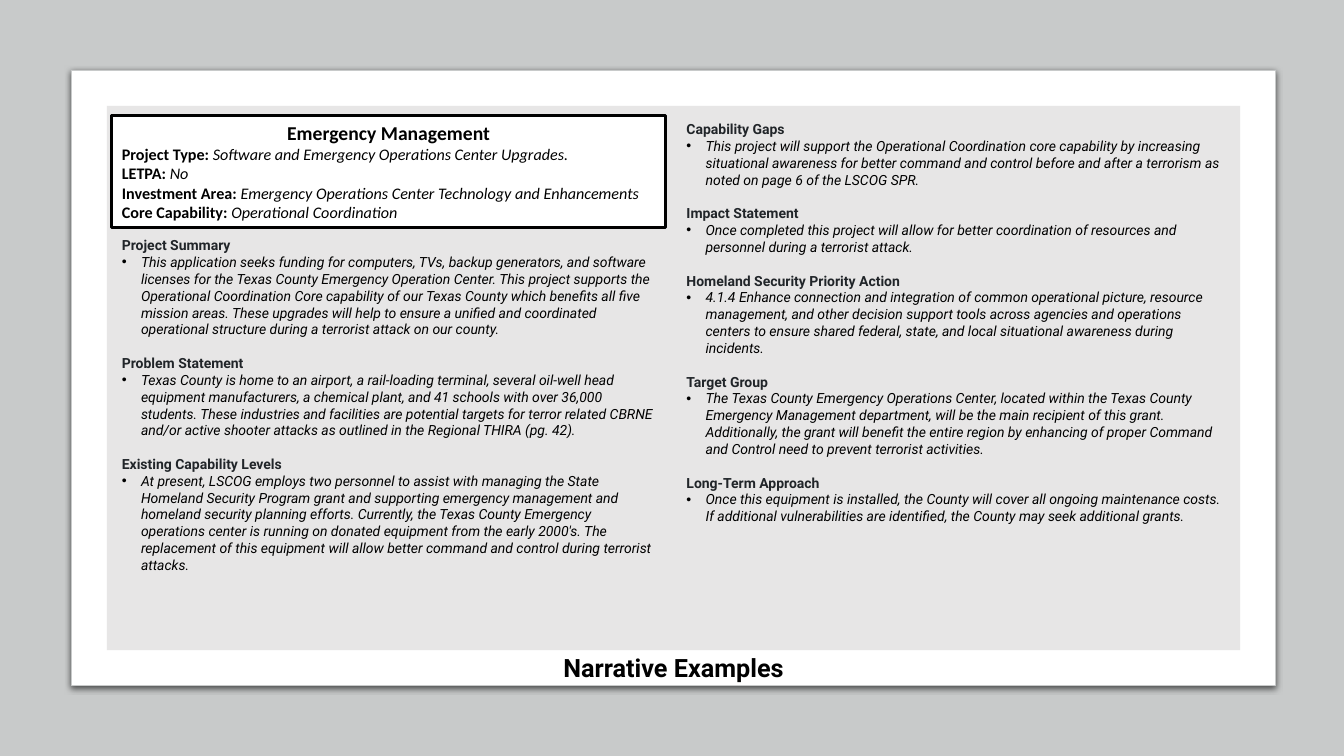
from lxml import etree
from pptx import Presentation
from pptx import util as u
from pptx.dml.color import RGBColor
from pptx.enum import shapes, text
from pptx.oxml import ns

HEADING, BODY, WHITE = "212529", "000000", "FFFFFF"
BACKDROP, PANEL = "C8CACA", "E7E6E6"

PROJECT_FACTS = [
    ("Project Type: ", "Software and Emergency Operations Center Upgrades."),
    ("LETPA: ", "No"),
    ("Investment Area: ", "Emergency Operations Center Technology and Enhancements"),
    ("Core Capability: ", "Operational Coordination"),
]

LEFT_SECTIONS = [
    ("Project Summary",
     "This application seeks funding for computers, TVs, backup generators, and software "
     "licenses for the Texas County Emergency Operation Center. This project supports the Operational "
     "Coordination Core capability of our Texas County which benefits all five mission areas. "
     "These upgrades will help to ensure a unified and coordinated operational structure during "
     "a terrorist attack on our county."),
    ("Problem Statement",
     "Texas County is home to an airport, a rail-loading terminal, several oil-well head equipment "
     "manufacturers, a chemical plant, and 41 schools with over 36,000 students. These industries "
     "and facilities are potential targets for terror related CBRNE and/or active shooter attacks "
     "as outlined in the Regional THIRA (pg. 42)."),
    ("Existing Capability Levels",
     "At present, LSCOG employs two personnel to assist with managing the State Homeland Security "
     "Program grant and supporting emergency management and homeland security planning efforts. "
     "Currently, the Texas County Emergency operations center is running on donated equipment from "
     "the early 2000's. The replacement of this equipment will allow better command and control "
     "during terrorist attacks."),
]

RIGHT_SECTIONS = [
    ("Capability Gaps",
     "This project will support the Operational Coordination core capability by increasing "
     "situational awareness for better command and control before and after a terrorism as noted "
     "on page 6 of the LSCOG SPR."),
    ("Impact Statement",
     "Once completed this project will allow for better coordination of resources and personnel "
     "during a terrorist attack."),
    ("Homeland Security Priority Action",
     "4.1.4 Enhance connection and integration of common operational picture, resource management, "
     "and other decision support tools across agencies and operations centers to ensure shared "
     "federal, state, and local situational awareness during incidents."),
    ("Target Group",
     "The Texas County Emergency Operations Center, located within the Texas County Emergency "
     "Management department, will be the main recipient of this grant. Additionally, the grant "
     "will benefit the entire region by enhancing of proper Command and Control need to prevent "
     "terrorist activities."),
    ("Long-Term Approach",
     "Once this equipment is installed, the County will cover all ongoing maintenance costs. If "
     "additional vulnerabilities are identified, the County may seek additional grants."),
]


def color(value):
    return RGBColor.from_string(value)


class NarrativeSlide:
    """Places styled elements by percentages of the slide's width and height."""

    def __init__(self, deck):
        self.deck = deck
        self.slide = deck.slides.add_slide(deck.slide_layouts[6])

    def area(self, left, top, width, height):
        across, down = self.deck.slide_width / 100, self.deck.slide_height / 100
        return [round(v) for v in (left * across, top * down, width * across, height * down)]

    def block(self, area, fill, line=None, weight=0.75, kind=shapes.MSO_SHAPE.RECTANGLE):
        block = self.slide.shapes.add_shape(kind, *self.area(*area))
        block.shadow.inherit = False
        block.fill.solid()
        block.fill.fore_color.rgb = color(fill)
        if line:
            block.line.color.rgb = color(line)
            block.line.width = u.Pt(weight)
        else:
            block.line.fill.background()
        return block

    def card(self, area):
        card = self.block(area, WHITE, BACKDROP, kind=shapes.MSO_SHAPE.ROUNDED_RECTANGLE)
        card.adjustments[0] = 0
        effects = card._element.spPr.find(ns.qn("a:effectLst"))
        shadow = etree.SubElement(effects, ns.qn("a:outerShdw"), blurRad=str(u.Pt(4.5)),
                                  dist=str(u.Pt(1.5)), dir="5400000", algn="t", rotWithShape="0")
        tint = etree.SubElement(shadow, ns.qn("a:srgbClr"), val="000000")
        etree.SubElement(tint, ns.qn("a:alpha"), val="63000")

    def text_frame(self, area):
        frame = self.slide.shapes.add_textbox(*self.area(*area)).text_frame
        frame.word_wrap = True
        return frame

    def style(self, paragraph, size, face="Roboto", tint=BODY, bold=None, italic=None):
        font = paragraph.font
        font.name, font.size, font.bold, font.italic = face, u.Pt(size), bold, italic
        font.color.rgb = color(tint)

    def bullet(self, paragraph):
        indent = u.Inches(0.19)
        props = paragraph._p.get_or_add_pPr()
        props.set("marL", str(indent))
        props.set("indent", str(-indent))
        etree.SubElement(props, ns.qn("a:buFont"), typeface="Arial")
        etree.SubElement(props, ns.qn("a:buChar"), char="•")

    def sections(self, area, entries):
        frame = self.text_frame(area)
        frame.auto_size = text.MSO_AUTO_SIZE.SHAPE_TO_FIT_TEXT
        for index, (heading, body) in enumerate(entries):
            title = frame.add_paragraph() if index else frame.paragraphs[0]
            title.text = heading
            if index:
                title.space_before = u.Pt(12)
            self.style(title, 10, tint=HEADING, bold=True)
            detail = frame.add_paragraph()
            detail.text = body
            self.bullet(detail)
            self.style(detail, 10, italic=True)

    def fact_box(self, area, heading, facts):
        frame = self.block(area, WHITE, BODY, 2.25).text_frame
        frame.word_wrap = True
        frame.auto_size = text.MSO_AUTO_SIZE.SHAPE_TO_FIT_TEXT
        frame.vertical_anchor = text.MSO_ANCHOR.TOP
        title = frame.paragraphs[0]
        title.text = heading
        title.alignment = text.PP_ALIGN.CENTER
        self.style(title, 14, "Calibri", bold=True)
        for label, value in facts:
            fact = frame.add_paragraph()
            fact.alignment = text.PP_ALIGN.LEFT
            self.style(fact, 11.5, "Calibri")
            for words, is_label in ((label, True), (value, False)):
                run = fact.add_run()
                run.text = words
                run.font.bold, run.font.italic = is_label, not is_label

    def caption(self, area, words):
        frame = self.text_frame(area)
        frame.vertical_anchor = text.MSO_ANCHOR.MIDDLE
        line = frame.paragraphs[0]
        line.text = words
        line.alignment = text.PP_ALIGN.CENTER
        line.line_spacing = 0.9
        self.style(line, 18, bold=True)


def main():
    deck = Presentation()
    deck.slide_width, deck.slide_height = u.Inches(13.33), u.Inches(7.5)
    page = NarrativeSlide(deck)

    # Backdrop, white card and grey panel
    page.block((0, 0, 100, 100), BACKDROP)
    page.card((5.33, 9.33, 89.57, 81.33))
    page.block((7.95, 14, 84.32, 72), PANEL)

    # Narrative columns
    page.sections((8.33, 30.67, 41.11, 46.27), LEFT_SECTIONS)
    page.sections((50.34, 15.33, 41.79, 55.2), RIGHT_SECTIONS)

    # Project facts and slide title
    page.fact_box((8.33, 15.33, 41.19, 14.8), "Emergency Management", PROJECT_FACTS)
    page.caption((5.33, 82.93, 89.57, 11.33), "Narrative Examples")

    deck.save("out.pptx")


if __name__ == "__main__":
    main()
